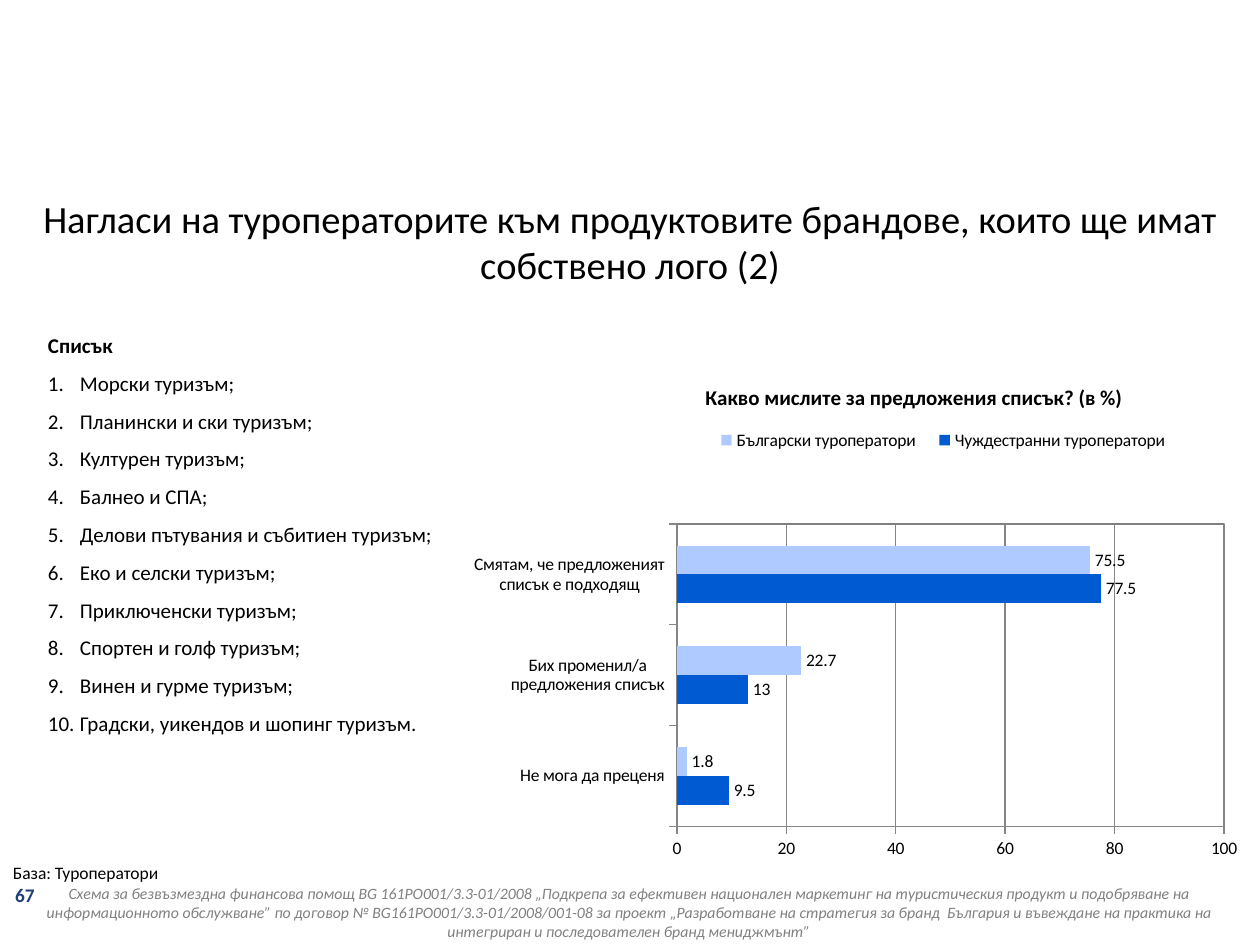
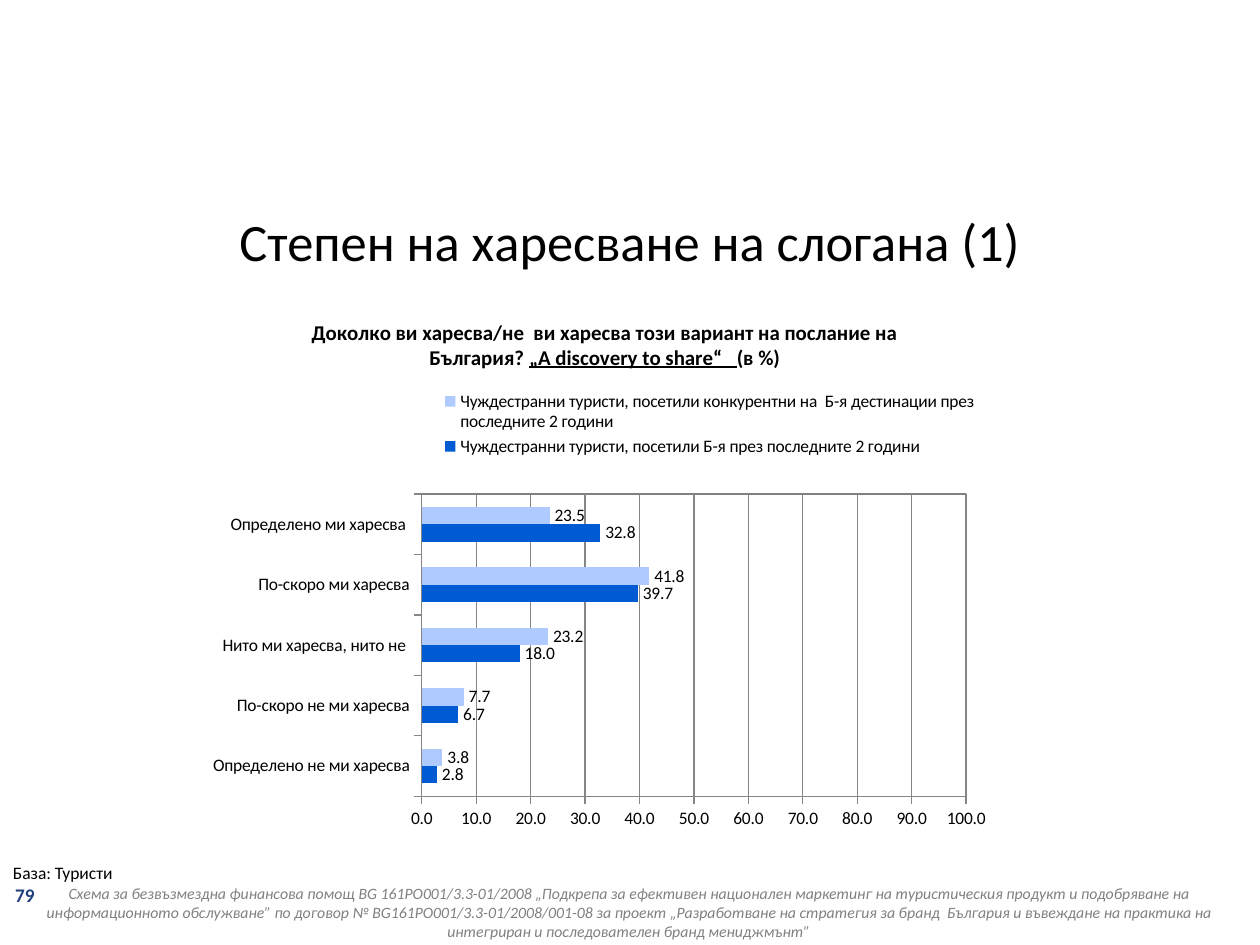
from lxml.etree import SubElement
from pptx import Presentation
from pptx.chart.data import CategoryChartData
from pptx.dml.color import RGBColor
from pptx.enum.chart import (XL_CHART_TYPE as ChartType, XL_LABEL_POSITION as LabelPosition,
                             XL_LEGEND_POSITION as LegendPosition, XL_TICK_MARK as TickMark)
from pptx.enum.text import MSO_ANCHOR as Anchor, MSO_AUTO_SIZE as AutoSize, PP_ALIGN as Align
from pptx.oxml import parse_xml
from pptx.oxml.ns import nsdecls, qn
from pptx.util import Pt

PX = 914400 / 126
FONT = "Calibri"
BLACK, GREY, NAVY, AXIS_GREY = "000000", "808080", "1F407B", "868686"
DARK_BLUE, LIGHT_BLUE = "005BD3", "AFCAFF"
CHART_SIZE = (774, 566)
PLOT_BOX = (206, 190, 547, 302)
FUNDING = ("Схема за безвъзмездна финансова помощ BG 161PO001/3.3-01/2008 „Подкрепа за ефективен "
           "национален маркетинг на туристическия продукт и подобряване на информационното "
           "обслужване” по договор № BG161PO001/3.3-01/2008/001-08 за проект „Разработване на "
           "стратегия за бранд  България и въвеждане на практика на интегриран и последователен "
           "бранд мениджмънт”")
PRODUCTS = ["Морски туризъм;", "Планински и ски туризъм;", "Културен туризъм;", "Балнео и СПА;",
            "Делови пътувания и събитиен туризъм;", "Еко и селски туризъм;",
            "Приключенски туризъм;", "Спортен и голф туризъм;", "Винен и гурме туризъм;",
            "Градски, уикендов и шопинг туризъм."]


def px(length):
    return round(length * PX)


def rgb(colour):
    return RGBColor.from_string(colour)


def write(paragraph, text, size=12, colour=BLACK, bold=False, italic=False,
          underline=False, align=None):
    """Append one formatted run to the paragraph."""
    run = paragraph.add_run()
    run.text = text
    font = run.font
    font.name, font.size, font.bold, font.italic = FONT, Pt(size), bold, italic
    font.underline = underline
    font.color.rgb = rgb(colour)
    if align is not None:
        paragraph.alignment = align


def add_frame(slide, box, inset=(13, 6)):
    frame = slide.shapes.add_textbox(*map(px, box)).text_frame
    frame.word_wrap = True
    frame.margin_left = frame.margin_right = px(inset[0])
    frame.margin_top = frame.margin_bottom = px(inset[1])
    return frame


def add_base_slide(prs, title, title_size, number, respondents):
    """Add a slide with its title, sample note, page number and funding line."""
    slide = prs.slides.add_slide(prs.slide_layouts[5])
    heading = slide.shapes.title
    heading.left, heading.top, heading.width, heading.height = map(px, (0, 199, 1260, 84))
    frame = heading.text_frame
    frame.auto_size, frame.vertical_anchor = AutoSize.NONE, Anchor.MIDDLE
    write(frame.paragraphs[0], title, size=title_size, align=Align.CENTER)

    write(add_frame(slide, (0, 878, 1257, 70)).paragraphs[0], FUNDING,
          size=9, colour=GREY, italic=True, align=Align.CENTER)
    write(add_frame(slide, (5, 878, 58, 50), inset=(10, 5)).paragraphs[0], number,
          size=11, colour=NAVY, bold=True)
    write(add_frame(slide, (0, 856, 213, 34)).paragraphs[0], f"База: {respondents}", size=10)
    return slide


def add_numbered_list(slide, box, heading, items):
    frame = add_frame(slide, box)
    write(frame.paragraphs[0], heading, bold=True)
    for item in items:
        paragraph = frame.add_paragraph()
        properties = paragraph._p.get_or_add_pPr()
        properties.set("marL", str(px(32)))
        properties.set("indent", str(-px(32)))
        SubElement(properties, qn("a:buFont"), typeface="+mj-lt")
        SubElement(properties, qn("a:buAutoNum"), type="arabicPeriod")
        write(paragraph, item)
    for paragraph in frame.paragraphs:
        paragraph.line_spacing = 1.5


def set_layout(part, index, left, top, width=None, height=None, inner=False):
    """Fix a chart part at a px box inside the chart."""
    for old in part.findall(qn("c:layout")):
        part.remove(old)
    layout = parse_xml(f"<c:layout {nsdecls('c')}/>")
    manual = SubElement(layout, qn("c:manualLayout"))
    if inner:
        SubElement(manual, qn("c:layoutTarget"), val="inner")
    for mode in ("xMode", "yMode"):
        SubElement(manual, qn(f"c:{mode}"), val="edge")
    chart_width, chart_height = CHART_SIZE
    for key, length, whole in (("x", left, chart_width), ("y", top, chart_height),
                               ("w", width, chart_width), ("h", height, chart_height)):
        if length is not None:
            SubElement(manual, qn(f"c:{key}"), val=f"{length / whole:.3f}")
    part.insert(index, layout)


def style_axes(chart, step, number_format):
    values, categories = chart.value_axis, chart.category_axis
    values.minimum_scale, values.maximum_scale, values.major_unit = 0, 100, step
    values.has_major_gridlines = True
    values.tick_labels.number_format = number_format
    values.tick_labels.number_format_is_linked = False
    for axis in (values, categories):
        axis.major_tick_mark, axis.minor_tick_mark = TickMark.OUTSIDE, TickMark.NONE
    for line in (values.format.line, categories.format.line, values.major_gridlines.format.line):
        line.color.rgb = rgb(AXIS_GREY)
        line.width = Pt(0.75)


def add_survey_chart(slide, position, question, title_at, legend_box, categories, answers,
                     step, axis_format):
    """Add a bar chart; answers holds (name, values, colour, label format)."""
    data = CategoryChartData()
    data.categories = categories
    for name, shares, _, _ in answers:
        data.add_series(name, shares)
    chart = slide.shapes.add_chart(ChartType.BAR_CLUSTERED,
                                   *map(px, position + CHART_SIZE), data).chart
    chart.font.name, chart.font.size = FONT, Pt(10)
    chart.font.color.rgb = rgb(BLACK)

    bars = chart.plots[0]
    bars.gap_width, bars.overlap, bars.vary_by_categories = 150, 0, False
    for series, (_, _, colour, label_format) in zip(bars.series, answers):
        series.invert_if_negative = False
        series.format.fill.solid()
        series.format.fill.fore_color.rgb = rgb(colour)
        labels = series.data_labels
        labels.show_value, labels.position = True, LabelPosition.OUTSIDE_END
        labels.number_format, labels.number_format_is_linked = label_format, False
    style_axes(chart, step, axis_format)

    title = chart.chart_title.text_frame.paragraphs[0]
    for text, underline in question:
        write(title, text, bold=True, underline=underline)
    title_part = chart.chart_title._element
    set_layout(title_part, 1, *title_at)
    title_part.find(qn("c:overlay")).set("val", "1")

    chart.has_legend = True
    chart.legend.position = LegendPosition.TOP
    chart.legend.include_in_layout = False
    set_layout(chart.legend._element, 1, *legend_box)

    plot_area = chart._chartSpace.chart.plotArea
    set_layout(plot_area, 0, *PLOT_BOX, inner=True)
    plot_area.append(parse_xml(
        f'<c:spPr {nsdecls("c", "a")}><a:noFill/><a:ln w="9525"><a:solidFill>'
        f'<a:srgbClr val="{GREY}"/></a:solidFill></a:ln></c:spPr>'))


def add_brand_attitudes(prs):
    slide = add_base_slide(
        prs, "Нагласи на туроператорите към продуктовите брандове, които ще имат собствено лого (2)",
        22, "67", "Туроператори")
    add_survey_chart(
        slide, (471, 334), [("Какво мислите за предложения списък? (в %)", False)],
        title_at=(231, 46), legend_box=(232, 90, 480, 32),
        categories=["Не мога да преценя", "Бих променил/а предложения списък",
                    "Смятам, че предложеният списък е подходящ"],
        answers=[("Чуждестранни туроператори", (9.5, 13, 77.5), DARK_BLUE, "General"),
                 ("Български туроператори", (1.8, 22.7, 75.5), LIGHT_BLUE, "####.0")],
        step=20, axis_format="#,##0")
    add_numbered_list(slide, (35, 314, 476, 432), "Списък", PRODUCTS)


def add_slogan_rating(prs):
    slide = add_base_slide(prs, "Степен на харесване на слогана (1)", 30, "79", "Туристи")
    add_survey_chart(
        slide, (213, 304),
        [("Доколко ви харесва/не  ви харесва този вариант на послание на България? ", False),
         ("„A discovery to share“   ", True), ("(в %)", False)],
        title_at=(91, 10), legend_box=(220, 82, 550, 76),
        categories=["Определено не ми харесва", "По-скоро не ми харесва",
                    "Нито ми харесва, нито не ", "По-скоро ми харесва", "Определено ми харесва "],
        answers=[("Чуждестранни туристи, посетили Б-я през последните 2 години",
                  (2.8, 6.7, 18, 39.7, 32.8), DARK_BLUE, "0.0"),
                 ("Чуждестранни туристи, посетили конкурентни на  Б-я дестинации през последните "
                  "2 години", (3.8, 7.7, 23.2, 41.8, 23.5), LIGHT_BLUE, "0.0")],
        step=10, axis_format="0.0")


def main():
    prs = Presentation()
    prs.slide_width, prs.slide_height = px(1260), px(945)
    add_brand_attitudes(prs)
    add_slogan_rating(prs)
    prs.save("out.pptx")


if __name__ == "__main__":
    main()
